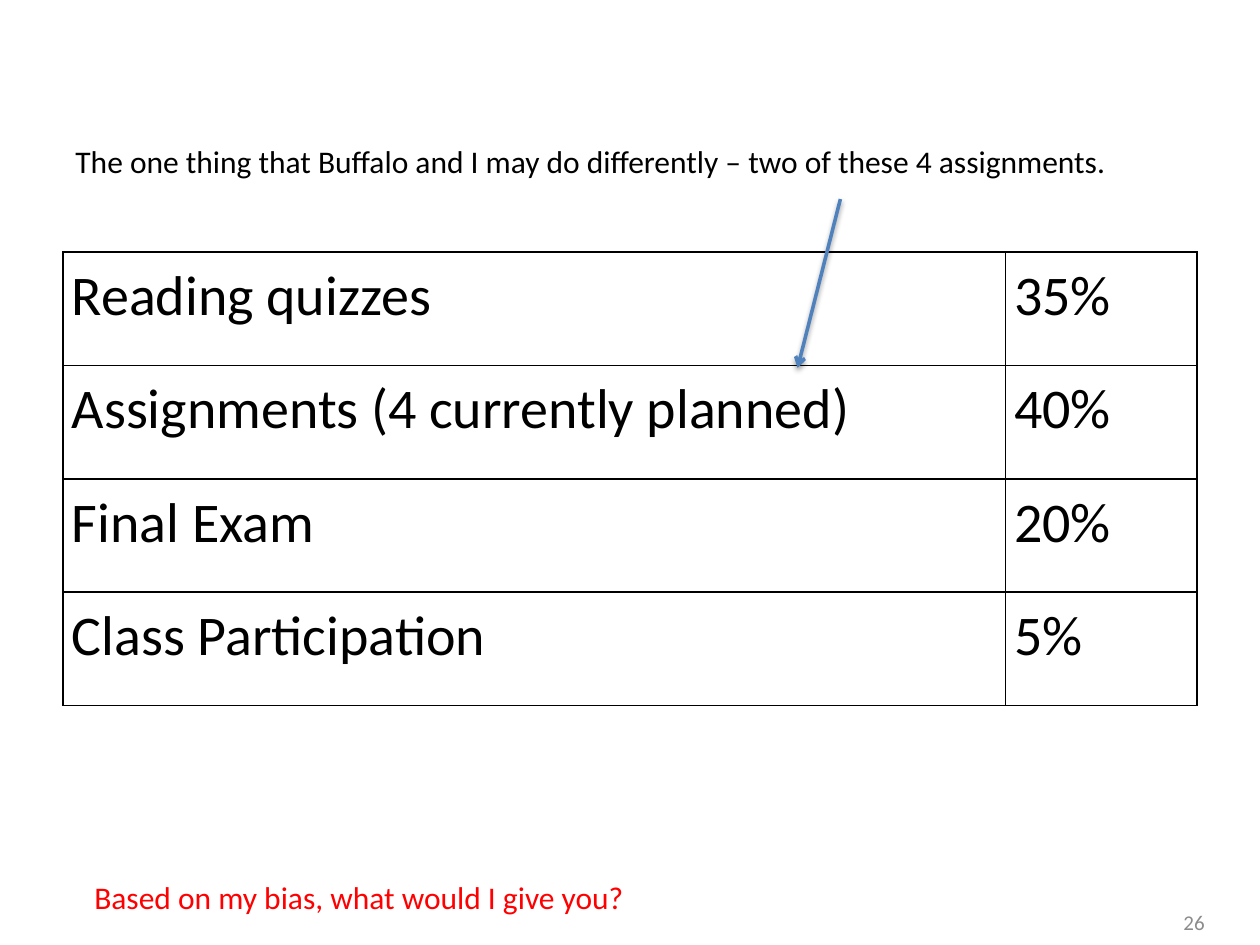
from dataclasses import dataclass

from lxml.etree import SubElement
from pptx import Presentation
from pptx.dml.color import RGBColor
from pptx.enum.shapes import MSO_CONNECTOR
from pptx.enum.text import MSO_ANCHOR, PP_ALIGN
from pptx.oxml import parse_xml
from pptx.oxml.ns import nsdecls, qn
from pptx.util import Inches, Pt


@dataclass(frozen=True)
class Theme:
    """Colours and type sizes of the slide."""
    font: str = "Calibri"
    ink: str = "000000"
    red: str = "FF0000"
    gray: str = "8C8C8C"
    blue: str = "4F81BD"
    large: int = 32
    note: int = 18
    small: int = 12


THEME = Theme()
GRADES = [
    ("Reading quizzes", "35%"),
    ("Assignments (4 currently planned)", "40%"),
    ("Final Exam", "20%"),
    ("Class Participation", "5%"),
]


def style(para, size, color):
    """Set the font of a paragraph."""
    font = para.font
    font.name = THEME.font
    font.size = Pt(size)
    font.color.rgb = RGBColor.from_string(color)


def add_note(slide, box, text, size, color, align=PP_ALIGN.LEFT, wrap=False):
    """Add a one-line text box."""
    frame = slide.shapes.add_textbox(*map(Inches, box)).text_frame
    frame.word_wrap = wrap
    frame.vertical_anchor = MSO_ANCHOR.MIDDLE
    para = frame.paragraphs[0]
    para.text = text
    para.alignment = align
    style(para, size, color)


def add_border(cell):
    """Draw a thin line on all four sides of a cell."""
    props = cell._tc.get_or_add_tcPr()
    for side in ("lnL", "lnR", "lnT", "lnB"):
        line = SubElement(props, qn(f"a:{side}"), w=str(Pt(1)))
        fill = SubElement(line, qn("a:solidFill"))
        SubElement(fill, qn("a:srgbClr"), val=THEME.ink)


def fill_cell(cell, text):
    """Write and format one table cell."""
    add_border(cell)
    cell.fill.background()
    cell.margin_left = cell.margin_right = Inches(0.07)
    cell.margin_top = cell.margin_bottom = 0
    para = cell.text_frame.paragraphs[0]
    para.text = text
    para.line_spacing = 1.15
    style(para, THEME.large, THEME.ink)


def add_grades(slide, rows, left, top, widths, height):
    """Add the table of grade weights."""
    box = (left, top, sum(widths), height * len(rows))
    table = slide.shapes.add_table(
        len(rows), len(widths), *map(Inches, box)).table
    table.first_row = table.horz_banding = False
    for col, width in zip(table.columns, widths):
        col.width = Inches(width)
    for row, texts in zip(table.rows, rows):
        row.height = Inches(height)
        for cell, text in zip(row.cells, texts):
            fill_cell(cell, text)


def add_arrow(slide, start, end):
    """Add an arrow with a soft shadow."""
    arrow = slide.shapes.add_connector(
        MSO_CONNECTOR.STRAIGHT, *map(Inches, start + end))
    arrow.line.color.rgb = RGBColor.from_string(THEME.blue)
    arrow.line.width = Pt(2)
    SubElement(arrow.line._get_or_add_ln(), qn("a:tailEnd"), type="arrow")
    arrow._element.spPr.append(parse_xml(
        f'<a:effectLst {nsdecls("a")}>'
        '<a:outerShdw blurRad="40000" dist="20000" dir="5400000" rotWithShape="0">'
        f'<a:srgbClr val="{THEME.ink}"><a:alpha val="38000"/></a:srgbClr>'
        '</a:outerShdw></a:effectLst>'))


def main():
    """Build and save the slide."""
    deck = Presentation()
    deck.slide_width, deck.slide_height = Inches(10), Inches(7.5)
    slide = deck.slides.add_slide(deck.slide_layouts[6])
    add_note(slide, (7.33, 7.12, 2.33, 0.4), "26", THEME.small, THEME.gray,
             PP_ALIGN.RIGHT, True)
    add_grades(slide, GRADES, 0.5, 2, (7.48, 1.52), 0.9)
    add_note(slide, (0.5, 1.08, 8.49, 0.4),
             "The one thing that Buffalo and I may do differently – "
             "two of these 4 assignments.", THEME.note, THEME.ink)
    add_arrow(slide, (6.67, 1.58), (6.33, 2.92))
    add_note(slide, (0.65, 6.92, 4.46, 0.4),
             "Based on my bias, what would I give you?", THEME.note, THEME.red)
    deck.save("out.pptx")


if __name__ == "__main__":
    main()
